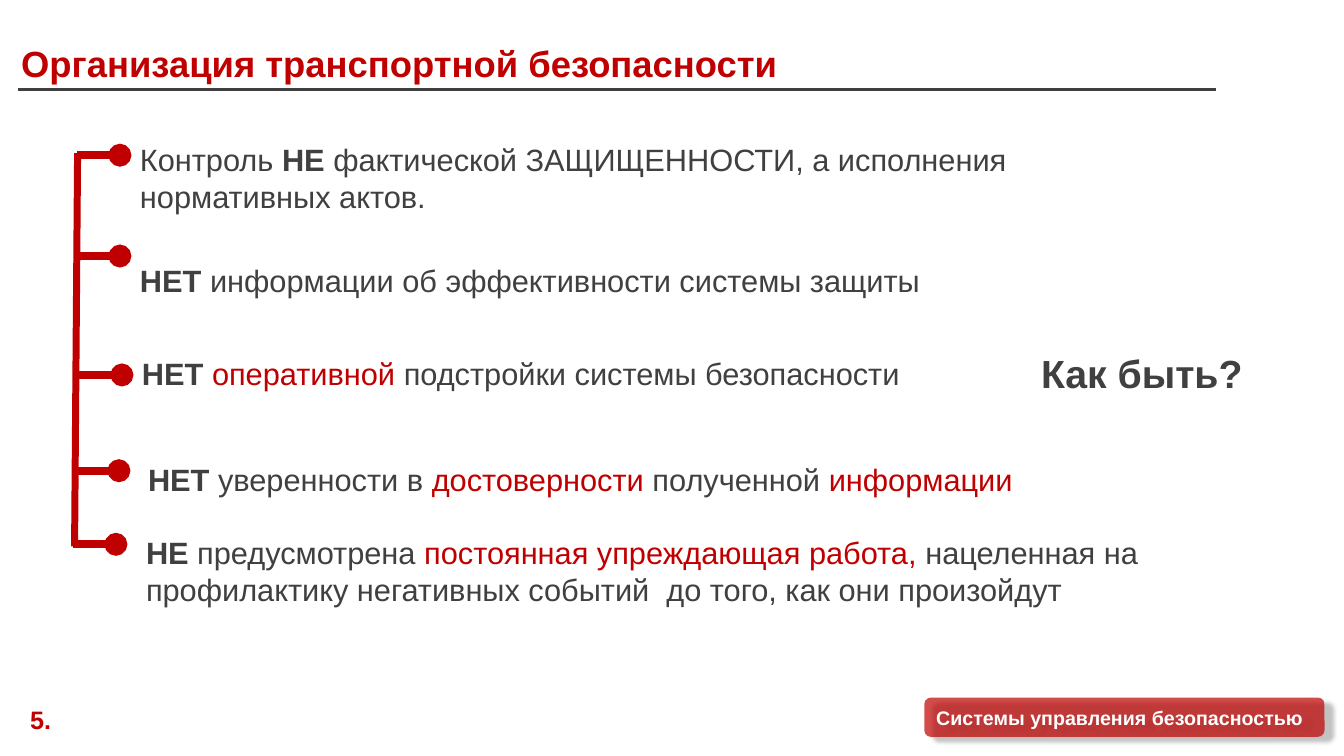
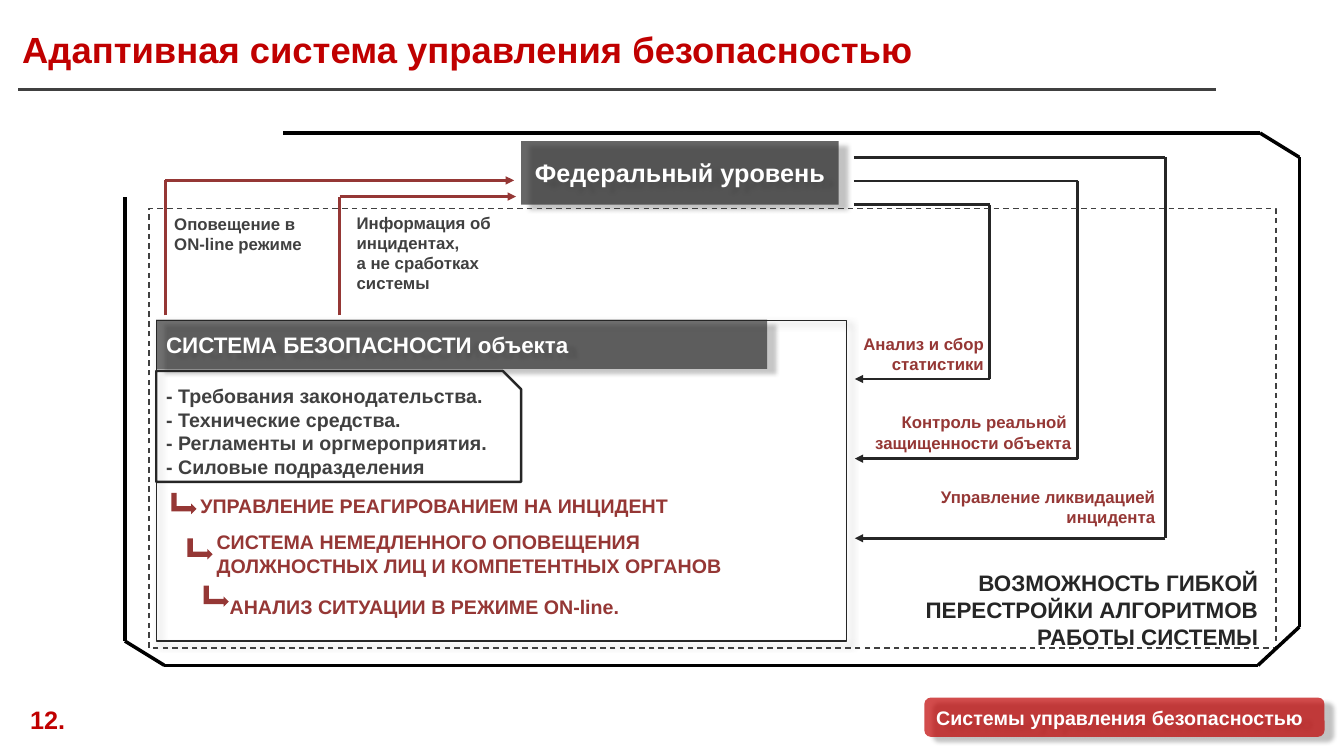
from lxml.etree import SubElement
from pptx import Presentation
from pptx.dml.color import RGBColor
from pptx.enum.dml import MSO_LINE
from pptx.enum.shapes import MSO_CONNECTOR, MSO_SHAPE
from pptx.enum.text import MSO_ANCHOR, MSO_AUTO_SIZE, PP_ALIGN
from pptx.oxml.ns import qn
from pptx.util import Inches, Pt

UNIT = Inches(0.1)  # one column or row of the layout grid
COLS, ROWS = 133.33, 75
FONT = "Arial"
RED = RGBColor(0xC0, 0x00, 0x00)
BRICK = RGBColor(0x95, 0x37, 0x35)
DARK = RGBColor(0x40, 0x40, 0x40)
INK = RGBColor(0x26, 0x26, 0x26)
GREY = RGBColor(0x59, 0x59, 0x59)
BLACK = RGBColor(0x00, 0x00, 0x00)
WHITE = RGBColor(0xFF, 0xFF, 0xFF)
DROP = (INK, 3, 7, 30)
SOFT = (GREY, 5, 4, 40)


def grid(*cells):
    return [int(c * UNIT) for c in cells]


def write(sp, paragraphs, size, color, bold=True, align=PP_ALIGN.LEFT,
          anchor=MSO_ANCHOR.MIDDLE, wrap=True, spacing=None):
    """A paragraph is a string or a list of (text, bold, color) runs."""
    tf = sp.text_frame
    tf.word_wrap = wrap
    tf.auto_size = MSO_AUTO_SIZE.NONE if wrap else MSO_AUTO_SIZE.SHAPE_TO_FIT_TEXT
    tf.vertical_anchor = anchor
    for i, runs in enumerate(paragraphs):
        p = tf.add_paragraph() if i else tf.paragraphs[0]
        p.alignment = align
        p.line_spacing = spacing
        if isinstance(runs, str):
            runs = [(runs, bold, color)]
        for text, run_bold, run_color in runs:
            r = p.add_run()
            r.text = text
            r.font.name = FONT
            r.font.size = Pt(size)
            r.font.bold = run_bold
            r.font.color.rgb = run_color


def add_text(slide, at, paragraphs, size, color, **style):
    write(slide.shapes.add_textbox(*grid(*at)), paragraphs, size, color, **style)


def add_note(slide, at, lines, color, align=PP_ALIGN.LEFT):
    add_text(slide, at, lines, 12, color, align=align,
             anchor=MSO_ANCHOR.TOP, wrap=False)


def add_shadow(sp, color, blur, distance, angle):
    effects = sp._element.spPr.find(qn("a:effectLst"))
    shadow = SubElement(effects, qn("a:outerShdw"), blurRad=str(Pt(blur)),
                        dist=str(Pt(distance)), dir=str(angle * 60000),
                        algn="tl", rotWithShape="0")
    clr = SubElement(shadow, qn("a:srgbClr"), val=str(color))
    SubElement(clr, qn("a:alpha"), val="40000")


def add_box(slide, kind, at, fill=None, opacity=100, line=None, width=1, shadow=None):
    sp = slide.shapes.add_shape(kind, *grid(*at))
    sp.shadow.inherit = False
    if fill is None:
        sp.fill.background()
    else:
        sp.fill.solid()
        sp.fill.fore_color.rgb = fill
        if opacity < 100:
            clr = sp._element.spPr.find(qn("a:solidFill")).find(qn("a:srgbClr"))
            SubElement(clr, qn("a:alpha"), val=str(opacity * 1000))
    if line is None:
        sp.line.fill.background()
    else:
        sp.line.color.rgb = line
        sp.line.width = Pt(width)
    if shadow:
        add_shadow(sp, *shadow)
    return sp


def add_route(slide, points, color, width, end=None):
    """Straight connectors through the points; the last may carry an end mark."""
    for start, stop in zip(points, points[1:]):
        cx = slide.shapes.add_connector(MSO_CONNECTOR.STRAIGHT, *grid(*start, *stop))
        cx.line.color.rgb = color
        cx.line.width = Pt(width)
        SubElement(cx._element.spPr, qn("a:effectLst"))
    if end:
        SubElement(cx.line._get_or_add_ln(), qn("a:tailEnd"), type=end)


def add_step_arrow(slide, col, row):
    sp = add_box(slide, MSO_SHAPE.BENT_UP_ARROW, (col, row, 2.1, 2.5), BRICK)
    sp.rotation = 270
    xfrm = sp._element.spPr.find(qn("a:xfrm"))
    xfrm.set("flipH", "1")
    xfrm.set("flipV", "1")


def new_slide(prs, title, title_at, number, number_width):
    slide = prs.slides.add_slide(prs.slide_layouts[5])
    sp = slide.shapes.title
    sp.left, sp.top, sp.width, sp.height = grid(*title_at)
    write(sp, [title], 26, RED, anchor=MSO_ANCHOR.TOP, spacing=0.9)
    add_route(slide, [(1.8, 8.9), (120.6, 8.9)], DARK, 2.5)
    badge = add_box(slide, MSO_SHAPE.ROUNDED_RECTANGLE, (91.7, 69.2, 39.7, 3.9),
                    RED, 70, shadow=DROP)
    write(badge, ["Системы управления безопасностью"], 14, WHITE)
    add_text(slide, (2, 69.4, number_width, 4), [number], 18, RED,
             anchor=MSO_ANCHOR.TOP, wrap=False)
    return slide


def build_problems(prs):
    slide = new_slide(prs, "Организация транспортной безопасности",
                      (1.1, 4.1, 125.1, 6.1), "5.", 4.1)
    add_route(slide, [(7.7, 15.2), (7.4, 54.2)], RED, 5)
    problems = [
        ((11.9, 15.4), (12.9, 12.5, 102.8, 10.2),
         [("Контроль ", False, DARK), ("НЕ", True, DARK),
          (" фактической ЗАЩИЩЕННОСТИ, а исполнения нормативных актов.", False, DARK)]),
        ((11.9, 25.4), (12.9, 22.7, 90.2, 10.2),
         [("НЕТ ", True, DARK),
          ("информации об эффективности системы защиты", False, DARK)]),
        ((12.1, 37.2), (13.1, 34, 79.9, 6.1),
         [("НЕТ ", True, DARK), ("оперативной ", False, RED),
          ("подстройки системы безопасности", False, DARK)]),
        ((11.8, 46.7), (13.7, 43.2, 93.8, 8.7),
         [("НЕТ", True, DARK), (" уверенности в ", False, DARK),
          ("достоверности ", False, RED), ("полученной ", False, DARK),
          ("информации", False, RED)]),
        ((11.5, 54), (13.5, 51.5, 102.8, 10.2),
         [("НЕ", True, DARK), (" предусмотрена ", False, DARK),
          ("постоянная упреждающая работа, ", False, RED),
          ("нацеленная на профилактику негативных событий  до того, "
           "как они произойдут", False, DARK)]),
    ]
    for (col, row), at, runs in problems:
        add_route(slide, [(col - 4.3, row), (col, row)], RED, 5.5, "oval")
        add_text(slide, at, [runs], 22, DARK)
    add_text(slide, (102.3, 31.9, 23.5, 10.2), ["Как быть?"], 28, DARK)


def add_security_system(slide):
    banner = add_box(slide, MSO_SHAPE.RECTANGLE, (15.5, 31.7, 60.6, 4.9),
                     INK, 65, shadow=DROP)
    write(banner, ["СИСТЕМА БЕЗОПАСНОСТИ объекта"], 16, WHITE)
    add_box(slide, MSO_SHAPE.RECTANGLE, (15.5, 31.8, 68.5, 31.8), line=INK, shadow=SOFT)
    parts = add_box(slide, MSO_SHAPE.SNIP_1_RECTANGLE, (15.5, 36.8, 36.2, 11),
                    line=INK, width=1.75)
    write(parts, ["- Требования законодательства.", "- Технические средства.",
                  "- Регламенты и оргмероприятия.", "- Силовые подразделения"], 14, DARK)
    steps = [
        (48.7, (18.9, 47.8, 51, 4.7), "УПРАВЛЕНИЕ РЕАГИРОВАНИЕМ НА ИНЦИДЕНТ"),
        (53.2, (20.5, 52.6, 60.1, 4.7),
         "СИСТЕМА НЕМЕДЛЕННОГО ОПОВЕЩЕНИЯ ДОЛЖНОСТНЫХ ЛИЦ И КОМПЕТЕНТНЫХ ОРГАНОВ"),
        (57.9, (21.8, 58.1, 63, 4.2), "АНАЛИЗ СИТУАЦИИ В РЕЖИМЕ ON-line."),
    ]
    for i, (row, at, text) in enumerate(steps):
        add_step_arrow(slide, 17.2 + 1.6 * i, row)
        add_text(slide, at, [text], 14, BRICK)


def add_reports(slide):
    """Arrows that rise from the object to the federal level."""
    reports = [
        (16.4, 17.9, 51, (16.3, 20.7, 14.8, 5), ["Оповещение в", "ON-line режиме"]),
        (33.7, 19.5, 51.2, (34.4, 20.6, 16, 9.1),
         ["Информация об", "инцидентах,", "а не сработках", "системы"]),
    ]
    for col, row, tip, at, lines in reports:
        add_route(slide, [(col, 31.3), (col, row), (tip, row)], BRICK, 2, "triangle")
        add_note(slide, at, lines, DARK)


def add_controls(slide):
    """Nested loops that return from the federal level to the object."""
    controls = [
        ((84.5, 32.6, 14.1, 5), ["Анализ и сбор", "статистики"]),
        ((85.6, 40.4, 21.7, 5), ["Контроль реальной ", "защищенности объекта"]),
        ((92.1, 47.8, 23.5, 5), ["Управление ликвидацией", "инцидента"]),
    ]
    for i, (at, lines) in enumerate(controls):
        top, right, bottom = 20.3 - 2.35 * i, 98.2 + 8.7 * i, 37.6 + 7.9 * i
        add_route(slide, [(84.7, top), (right, top), (right, bottom), (84.8, bottom)],
                  INK, 2, "triangle")
        add_note(slide, at, lines, BRICK, PP_ALIGN.RIGHT)


def build_adaptive_system(prs):
    slide = new_slide(prs, "Адаптивная система управления безопасностью",
                      (1.2, 2.7, 127.2, 7.3), "12.", 5.5)
    add_security_system(slide)
    federal = add_box(slide, MSO_SHAPE.RECTANGLE, (51.7, 14, 31.5, 6.3),
                      INK, 70, shadow=DROP)
    write(federal, ["Федеральный уровень"], 18, WHITE, align=PP_ALIGN.CENTER)
    add_reports(slide)
    add_controls(slide)
    border = add_box(slide, MSO_SHAPE.RECTANGLE, (14.8, 20.7, 111.8, 43.6), line=DARK)
    border.line.dash_style = MSO_LINE.DASH
    add_text(slide, (90.4, 58.1, 35.4, 4.7),
             ["ВОЗМОЖНОСТЬ ГИБКОЙ ПЕРЕСТРОЙКИ АЛГОРИТМОВ РАБОТЫ СИСТЕМЫ"],
             16, INK, align=PP_ALIGN.RIGHT)
    add_route(slide, [(28.1, 13.2), (125, 13.2), (128.9, 15.6), (128.9, 62.2),
                      (124.8, 66), (16.3, 66), (12.4, 63.6), (12.4, 19.5)], BLACK, 2.5)


def main():
    prs = Presentation()
    prs.slide_width, prs.slide_height = grid(COLS, ROWS)
    build_problems(prs)
    build_adaptive_system(prs)
    prs.save("out.pptx")


if __name__ == "__main__":
    main()
